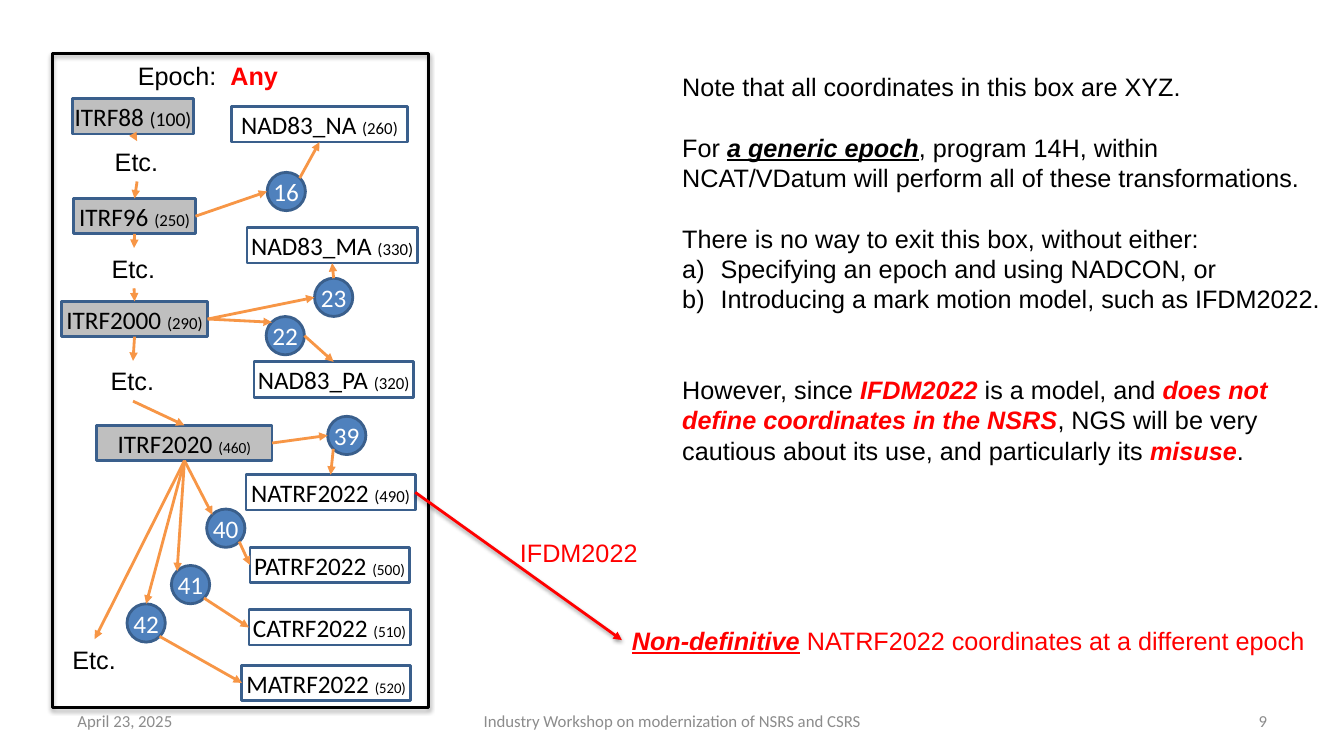
from pptx import Presentation
from pptx import util as u
from pptx.dml.color import RGBColor
from pptx.enum import shapes, text
from pptx.oxml import parse_xml
from pptx.oxml.ns import nsdecls, qn

COLUMNS, ROWS = 133.33, 75
CELL = u.Inches(0.1)
COLORS = {
    "black": "000000", "white": "FFFFFF", "red": "FF0000", "footer": "8C8C8C",
    "itrf": "BFBFBF", "program": "4F81BD", "border": "3A5F8C", "arrow": "F79646",
}
ANCHORS = {
    "top": (0.5, 0), "bottom": (0.5, 1), "left": (0, 0.5), "right": (1, 0.5),
    "top left": (0.15, 0.15), "top right": (0.85, 0.15),
    "bottom left": (0.15, 0.85), "bottom right": (0.85, 0.85),
}
FRAMES = [
    ("ITRF88", "(100)", 14, "itrf", (7.2, 9.8, 12)),
    ("ITRF96", "(250)", 12, "itrf", (7.3, 19.7, 12.1)),
    ("ITRF2000", "(290)", 12, "itrf", (6.1, 29.9, 14.5)),
    ("ITRF2020", "(460)", 11, "itrf", (9.6, 42.2, 17.4)),
    ("NAD83_NA", "(260)", 12, "white", (23, 10.6, 17.4)),
    ("NAD83_MA", "(330)", 12, "white", (24.5, 22.6, 16.9)),
    ("NAD83_PA", "(320)", 12, "white", (25.2, 35.9, 15.8)),
    ("NATRF2022", "(490)", 12, "white", (24.4, 47.1, 16.8)),
    ("PATRF2022", "(500)", 11, "white", (24.8, 54.3, 15.8)),
    ("CATRF2022", "(510)", 11, "white", (24.7, 60.5, 16)),
    ("MATRF2022", "(520)", 10.5, "white", (24, 66, 16.7)),
]
PROGRAMS = {
    "16": (26.5, 17.1), "22": (26.4, 31.4), "23": (31.2, 27.6), "39": (32.5, 41.3),
    "40": (20.5, 50.5), "41": (17, 56.1), "42": (12.6, 59.9),
}
ETCS = {
    "after 88": (10.4, 14), "after 96": (10.1, 24.6),
    "after 2000": (10, 35.8), "after 2020": (6.2, 63.4),
}
LINKS = [
    ("ITRF88", "bottom", "after 88", "top"), ("after 88", "bottom", "ITRF96", "top"),
    ("ITRF96", "bottom", "after 96", "top"), ("after 96", "bottom", "ITRF2000", "top"),
    ("ITRF2000", "bottom", "after 2000", "top"), ("after 2000", "bottom", "ITRF2020", "top"),
    ("ITRF2020", "bottom", "after 2020", "top"),
    ("ITRF96", "right", "16", "left"), ("16", "top right", "NAD83_NA", "bottom"),
    ("ITRF2000", "right", "23", "left"), ("23", "top", "NAD83_MA", "bottom"),
    ("ITRF2000", "right", "22", "top left"), ("22", "right", "NAD83_PA", "top"),
    ("ITRF2020", "right", "39", "left"), ("39", "bottom left", "NATRF2022", "top"),
    ("ITRF2020", "bottom", "40", "top left"), ("40", "bottom right", "PATRF2022", "left"),
    ("ITRF2020", "bottom", "41", "top left"), ("41", "bottom right", "CATRF2022", "left"),
    ("ITRF2020", "bottom", "42", "top"), ("42", "bottom right", "MATRF2022", "left"),
]
EMPHASIS = ("red", "bi")
NOTE = [
    (0, False, [("Note that all coordinates in this box are XYZ.",)]),
    (1, False, [("For ",), ("a generic epoch", "black", "biu"),
                (", program 14H, within NCAT/VDatum will perform all of these transformations.",)]),
    (1, False, [("There is no way to exit this box, without either:",)]),
    (0, True, [("Specifying an epoch and using NADCON, or",)]),
    (0, True, [("Introducing a mark motion model, such as IFDM2022.",)]),
    (2, False, [("However, since ",), ("IFDM2022", *EMPHASIS), (" is a model, and ",),
                ("does not define coordinates in the NSRS", *EMPHASIS),
                (", NGS will be very cautious about its use, and particularly its ",),
                ("misuse", *EMPHASIS), (".",)]),
]


def cells(*counts):
    return [round(count * CELL) for count in counts]


def rgb(color):
    return RGBColor.from_string(COLORS[color])


def add_run(paragraph, words, color="black", style="", size=18, face="Arial"):
    run = paragraph.add_run()
    run.text = words
    run.font.name, run.font.size = face, u.Pt(size)
    run.font.color.rgb = rgb(color)
    run.font.bold, run.font.italic = "b" in style, "i" in style
    run.font.underline = "u" in style


def add_label(slide, place, runs, wrap=False, align=text.PP_ALIGN.LEFT,
              anchor=text.MSO_ANCHOR.TOP):
    frame = slide.shapes.add_textbox(*cells(*place)).text_frame
    frame.word_wrap = wrap
    frame.vertical_anchor = anchor
    if not wrap:
        frame.auto_size = text.MSO_AUTO_SIZE.SHAPE_TO_FIT_TEXT
    frame.paragraphs[0].alignment = align
    for run in runs:
        add_run(frame.paragraphs[0], *run)
    return frame


def add_node(slide, kind, place, fill, runs):
    node = slide.shapes.add_shape(kind, *cells(*place))
    node.shadow.inherit = False
    node.fill.solid()
    node.fill.fore_color.rgb = rgb(fill)
    node.line.color.rgb = rgb("border")
    node.line.width = u.Pt(2)
    frame = node.text_frame
    frame.margin_left = frame.margin_right = frame.margin_top = frame.margin_bottom = 0
    frame.vertical_anchor = text.MSO_ANCHOR.MIDDLE
    frame.word_wrap = True
    frame.paragraphs[0].alignment = text.PP_ALIGN.CENTER
    for run in runs:
        add_run(frame.paragraphs[0], *run)


def add_shadow(properties, opacity):
    properties.append(parse_xml(
        f'<a:effectLst {nsdecls("a")}><a:outerShdw blurRad="{u.Pt(3.1)}" dist="{u.Pt(1.8)}" '
        f'dir="5400000" rotWithShape="0"><a:srgbClr val="{COLORS["black"]}">'
        f'<a:alpha val="{opacity * 1000}"/></a:srgbClr></a:outerShdw></a:effectLst>'))


def add_arrow(slide, start, end, color="arrow", opacity=0):
    arrow = slide.shapes.add_connector(shapes.MSO_CONNECTOR.STRAIGHT, *cells(*start, *end))
    arrow.line.color.rgb = rgb(color)
    arrow.line.width = u.Pt(2)
    arrow.line._get_or_add_ln().append(
        parse_xml(f'<a:tailEnd {nsdecls("a")} type="triangle"/>'))
    properties = arrow._element.spPr
    if opacity:
        add_shadow(properties, opacity)
    else:
        properties.append(parse_xml(f'<a:effectLst {nsdecls("a")}/>'))


def anchor_point(place, side):
    left, top, width, height = place
    across, down = ANCHORS[side]
    return left + across * width, top + down * height


def add_box(slide):
    box = slide.shapes.add_shape(shapes.MSO_SHAPE.RECTANGLE, *cells(5.2, 5.3, 37.3, 64.9))
    box.fill.background()
    box.line.color.rgb = rgb("black")
    box.line.width = u.Pt(2)
    add_shadow(box._element.spPr, 35)


def add_network(slide):
    places = {}
    for name, code, code_size, fill, (left, top, width) in FRAMES:
        places[name] = (left, top, width, 3.5)
        add_node(slide, shapes.MSO_SHAPE.RECTANGLE, places[name], fill,
                 [(name + " ", "black", "", 18, "Calibri"),
                  (code, "black", "", code_size, "Calibri")])
    for number, corner in PROGRAMS.items():
        places[number] = (*corner, 3.8, 3.8)
        add_node(slide, shapes.MSO_SHAPE.OVAL, places[number], "program",
                 [(number, "white", "", 18, "Calibri")])
    for name, corner in ETCS.items():
        places[name] = (*corner, 6.4, 4)
        add_label(slide, places[name], [("Etc.",)])
    for source, source_side, target, target_side in LINKS:
        add_arrow(slide, anchor_point(places[source], source_side),
                  anchor_point(places[target], target_side))
    add_arrow(slide, anchor_point(places["NATRF2022"], "right"), (61.7, 63.5), "red", 38)


def add_note(slide):
    frame = add_label(slide, (66.7, 6.6, 65.6, 40.4), [], wrap=True)
    for index, (gap_lines, lettered, runs) in enumerate(NOTE):
        paragraph = frame.paragraphs[0] if index == 0 else frame.add_paragraph()
        if gap_lines:
            paragraph.space_before = u.Pt(21.7 * gap_lines)
        if lettered:
            properties = paragraph._p.get_or_add_pPr()
            properties.set("marL", str(u.Inches(0.38)))
            properties.set("indent", str(-u.Inches(0.38)))
            numbering = properties.makeelement(qn("a:buAutoNum"), {"type": "alphaLcParenR"})
            properties.append(numbering)
        for run in runs:
            add_run(paragraph, *run)


def add_footer(slide):
    for left, width, words, align in [
        (6.7, 31.1, "April 23, 2025", text.PP_ALIGN.LEFT),
        (45.6, 42.2, "Industry Workshop on modernization of NSRS and CSRS", text.PP_ALIGN.CENTER),
        (95.6, 31.1, "9", text.PP_ALIGN.RIGHT),
    ]:
        add_label(slide, (left, 69.5, width, 4), [(words, "footer", "", 12, "Calibri")],
                  True, align, text.MSO_ANCHOR.MIDDLE)


def main():
    deck = Presentation()
    deck.slide_width, deck.slide_height = cells(COLUMNS, ROWS)
    slide = deck.slides.add_slide(deck.slide_layouts[6])
    add_footer(slide)
    add_note(slide)
    add_box(slide)
    add_network(slide)
    add_label(slide, (12.7, 5.5, 16, 4), [("Epoch:  ",), ("Any", "red", "b")])
    add_label(slide, (61.7, 61.5, 69.4, 4),
              [("Non-definitive", "red", "biu"),
               (" NATRF2022 coordinates at a different epoch", "red")])
    add_label(slide, (50.6, 52.8, 13.8, 4), [("IFDM2022", "red")])
    deck.save("out.pptx")


if __name__ == "__main__":
    main()
